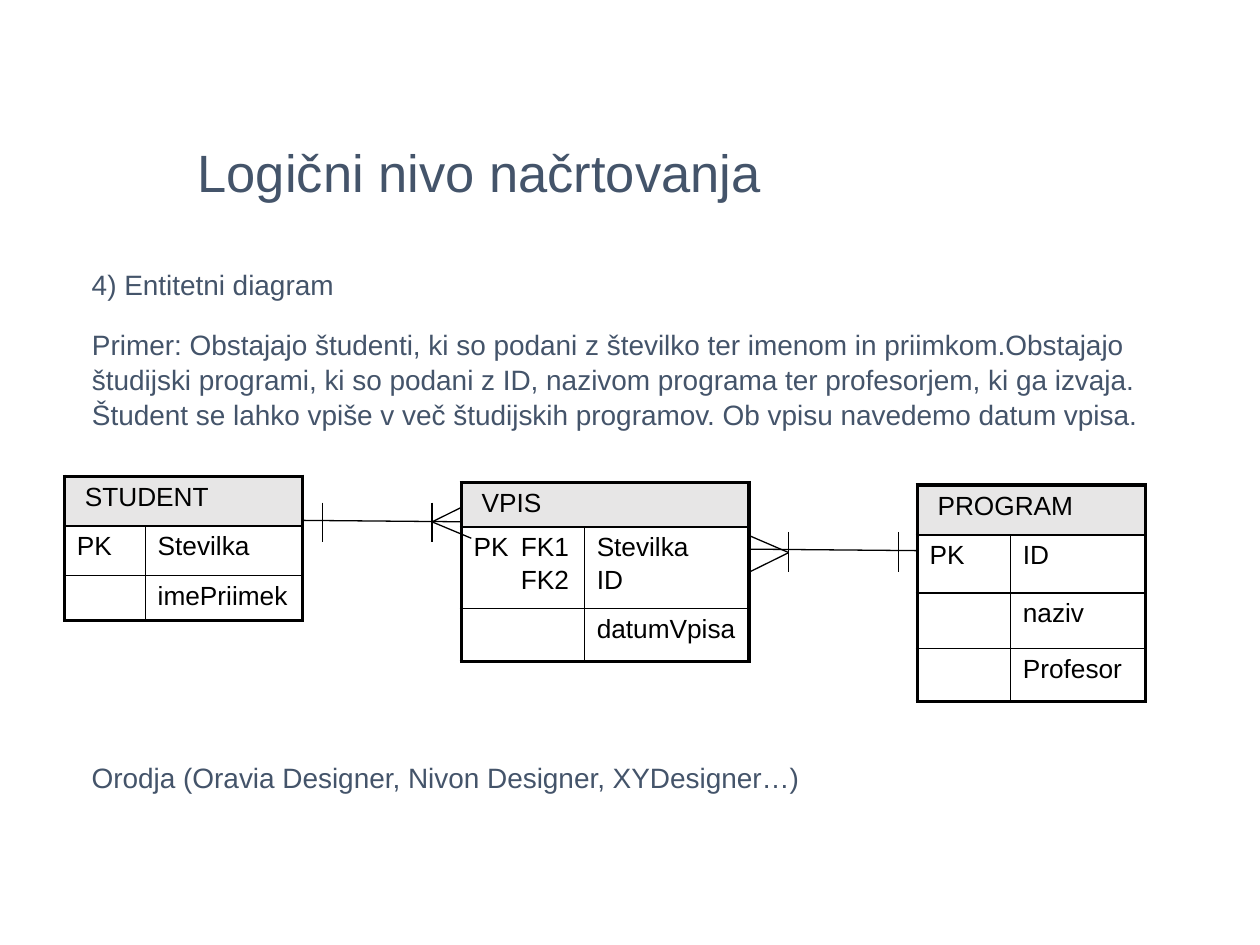
from dataclasses import dataclass

from lxml import etree
from pptx import Presentation
from pptx.dml.color import RGBColor
from pptx.enum.shapes import MSO_CONNECTOR
from pptx.enum.text import MSO_ANCHOR, MSO_AUTO_SIZE, PP_ALIGN
from pptx.oxml.ns import qn
from pptx.util import Cm, Pt

LINE = MSO_CONNECTOR.STRAIGHT
BOTTOM = MSO_ANCHOR.BOTTOM
CENTER, LEFT = PP_ALIGN.CENTER, PP_ALIGN.LEFT
NO_FIT = MSO_AUTO_SIZE.NONE

FONT = "Arial"
NAVY, BLACK, GREY = "44546A", "000000", "E7E6E6"
OUTER, INNER = 2.25, 1
CELL_SIZE = 15
KEY_TAB = 0.95  # second key column inside a cell, cm

Point = tuple[float, float]


@dataclass
class Entity:
    name: str
    left: float
    top: float
    cols: list[float]
    heights: list[float]
    rows: list[tuple[str, str]]


@dataclass
class Link:
    start: Point
    end: Point
    ticks: list[float]
    tick_span: Point
    apex: Point
    toes: list[Point]


STUDENT = Entity("STUDENT", 1.3, 9.6, [1.63, 3.17], [1, 1, 0.9],
                 [("PK", "Stevilka"), ("", "imePriimek")])
PROGRAM = Entity("PROGRAM", 18.49, 9.78, [1.88, 2.72], [1, 1.17, 1.12, 1.07],
                 [("PK", "ID"), ("", "naziv"), ("", "Profesor")])
VPIS = Entity("VPIS", 9.3, 9.73, [2.48, 3.32], [0.89, 1.65, 1.07],
              [("PK\tFK1\n\tFK2", "Stevilka\nID"), ("", "datumVpisa")])

STUDENT_VPIS = Link((6.1, 10.49), (9.5, 10.52), [6.5, 8.71], (10.13, 10.92),
                    (8.71, 10.52), [(9.5, 10.13), (9.5, 10.85)])
VPIS_PROGRAM = Link((15.09, 11.07), (18.49, 11.1), [18.11, 15.9], (10.72, 11.53),
                    (15.9, 11.14), [(15.11, 10.8), (15.11, 11.53)])


def rgb(color: str) -> RGBColor:
    return RGBColor.from_string(color)


def style_run(r, size: float, color: str) -> None:
    r.font.name = FONT
    r.font.size = Pt(size)
    r.font.color.rgb = rgb(color)


def place_text(sp, box: tuple, text: str, size: float, align=LEFT) -> None:
    """Position a text shape and fill it with one plain paragraph."""
    sp.left, sp.top, sp.width, sp.height = map(Cm, box)
    tf = sp.text_frame
    tf.text = text
    tf.word_wrap = True
    tf.auto_size = NO_FIT
    tf.vertical_anchor = BOTTOM
    p = tf.paragraphs[0]
    p.alignment = align
    p.line_spacing = 1.04
    p.space_before = Pt(0)
    style_run(p.runs[0], size, NAVY)


def set_borders(cell, widths: dict[str, float]) -> None:
    tc_pr = cell._tc.get_or_add_tcPr()
    for side, width in widths.items():
        ln = etree.SubElement(tc_pr, qn(f"a:ln{side}"), w=str(Pt(width)))
        fill = etree.SubElement(ln, qn("a:solidFill"))
        etree.SubElement(fill, qn("a:srgbClr"), val=BLACK)


def fill_cell(cell, text: str) -> None:
    tf = cell.text_frame
    tf.text = text
    for i, p in enumerate(tf.paragraphs):
        if i:
            p.space_before = Pt(2)
        if "\t" in p.text:
            tabs = etree.SubElement(p._p.get_or_add_pPr(), qn("a:tabLst"))
            etree.SubElement(tabs, qn("a:tab"), pos=str(Cm(KEY_TAB)), algn="l")
        for r in p.runs:
            style_run(r, CELL_SIZE, BLACK)
        if not p.runs:  # keeps empty rows from growing
            etree.SubElement(p._p, qn("a:endParaRPr"), sz=str(CELL_SIZE * 100))


def draw_entity(s, e: Entity) -> None:
    n = len(e.heights)
    frame = s.shapes.add_table(n, 2, Cm(e.left), Cm(e.top),
                               Cm(sum(e.cols)), Cm(sum(e.heights)))
    table = frame.table
    table.first_row = table.horz_banding = False
    for col, width in zip(table.columns, e.cols):
        col.width = Cm(width)
    for row, height in zip(table.rows, e.heights):
        row.height = Cm(height)
    for i, texts in enumerate([(e.name, "")] + e.rows):
        header = i == 0
        for j, text in enumerate(texts):
            cell = table.cell(i, j)
            fill_cell(cell, text)
            cell.margin_left = Cm(0.41 if header else 0.25)
            cell.margin_right = Cm(0.25)
            set_borders(cell, {
                "L": INNER if j else OUTER,
                "R": OUTER if j or header else INNER,
                "T": OUTER if header else INNER,
                "B": OUTER if i == n - 1 else INNER,
            })
            if header:
                cell.fill.solid()
                cell.fill.fore_color.rgb = rgb(GREY)
            else:
                cell.fill.background()
    table.cell(0, 0).merge(table.cell(0, 1))


def draw_line(s, start: Point, end: Point) -> None:
    c = s.shapes.add_connector(LINE, *map(Cm, start + end))
    c.line.color.rgb = rgb(BLACK)
    c.line.width = Pt(0.75)
    etree.SubElement(c._element.spPr, qn("a:effectLst"))


def draw_link(s, link: Link) -> None:
    """One-to-many relation: line, cardinality ticks and crow's foot."""
    draw_line(s, link.start, link.end)
    top, bottom = link.tick_span
    for x in link.ticks:
        draw_line(s, (x, top), (x, bottom))
    for toe in link.toes:
        draw_line(s, link.apex, toe)


def main() -> None:
    prs = Presentation()
    prs.slide_width, prs.slide_height = Cm(25.4), Cm(19.05)
    s = prs.slides.add_slide(prs.slide_layouts[1])

    # Title, centred left of the slide's middle
    title = s.shapes.title
    place_text(title, (1.6, 0.84, 22.22, 3.38), "Logični nivo načrtovanja", 30, CENTER)
    title.text_frame.margin_right = Cm(6.35)

    # Example description
    body = s.placeholders[1]
    place_text(body, (1.6, 6.53, 22.22, 2.29),
               "Primer: Obstajajo študenti, ki so podani z številko ter imenom in "
               "priimkom.Obstajajo študijski programi, ki so podani z ID, nazivom "
               "programa ter profesorjem, ki ga izvaja. Študent se lahko vpiše v več "
               "študijskih programov. Ob vpisu navedemo datum vpisa.", 16)
    p_pr = body.text_frame.paragraphs[0]._p.get_or_add_pPr()
    p_pr.set("marL", "0")
    p_pr.set("indent", "0")
    etree.SubElement(p_pr, qn("a:buNone"))

    # Section heading and tools
    for top, text in ((5.25, "4) Entitetni diagram"),
                      (15.19, "Orodja (Oravia Designer, Nivon Designer, XYDesigner…)")):
        box = (1.6, top, 22.22, 0.94)
        place_text(s.shapes.add_textbox(*map(Cm, box)), box, text, 16)

    # Entity diagram
    draw_entity(s, STUDENT)
    draw_entity(s, PROGRAM)
    draw_link(s, STUDENT_VPIS)
    draw_entity(s, VPIS)
    draw_link(s, VPIS_PROGRAM)

    prs.save("out.pptx")


if __name__ == "__main__":
    main()
